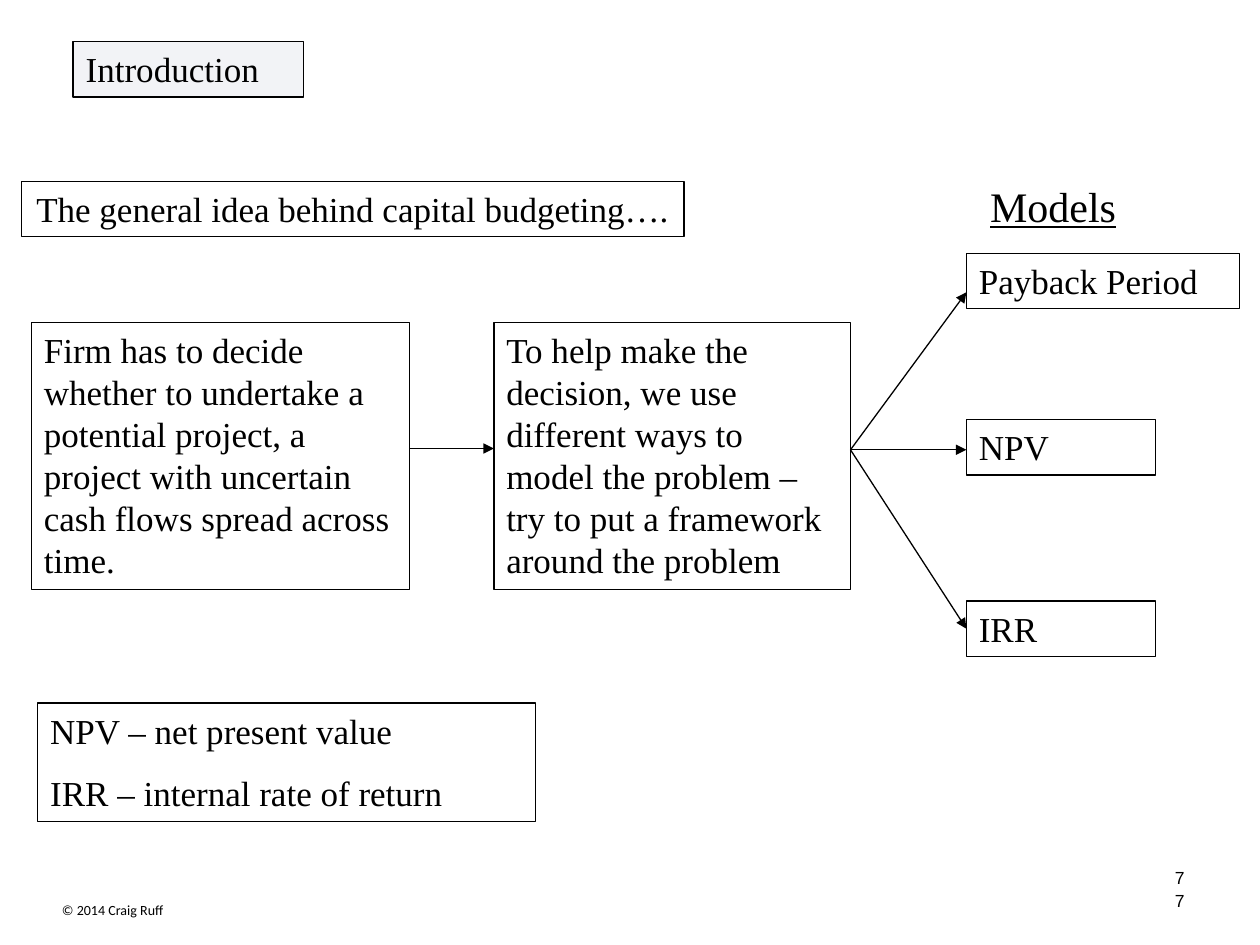
from lxml import etree
from pptx import Presentation
from pptx.dml.color import RGBColor
from pptx.enum.shapes import MSO_CONNECTOR, MSO_SHAPE
from pptx.enum.text import MSO_ANCHOR, MSO_AUTO_SIZE, PP_ALIGN
from pptx.oxml.ns import qn
from pptx.util import Inches, Pt

STRAIGHT = MSO_CONNECTOR.STRAIGHT
RECTANGLE = MSO_SHAPE.RECTANGLE
TOP, MIDDLE = MSO_ANCHOR.TOP, MSO_ANCHOR.MIDDLE
LEFT, CENTER, RIGHT = PP_ALIGN.LEFT, PP_ALIGN.CENTER, PP_ALIGN.RIGHT
NO_AUTOFIT = MSO_AUTO_SIZE.NONE

COLORS = {"ink": "000000", "title_fill": "002060"}
SERIF = "Times New Roman"
TITLE_ONLY = 5
LINE_WIDTH = 0.75
LABEL_HEIGHT = 0.44
IDEA_TOP, IDEA_HEIGHT = 2.56, 2.12
MODEL_LEFT = 7.67
FORK = (6.75, 3.57)
# name, box top, box width, height at which its arrow arrives
MODELS = [
    ("Payback Period", 2.01, 2.17, 2.32),
    ("NPV", 3.33, 1.5, 3.57),
    ("IRR", 4.77, 1.5, 4.99),
]


def color(name):
    return RGBColor.from_string(COLORS[name])


def write(shape, lines, size=20, font=SERIF, align=LEFT, anchor=TOP,
          wrap=True, underline=None):
    frame = shape.text_frame
    frame.text = "\n".join(lines)
    frame.auto_size = NO_AUTOFIT
    frame.word_wrap = wrap
    frame.vertical_anchor = anchor
    for index, para in enumerate(frame.paragraphs):
        para.alignment = align
        para.space_before = Pt(11.5 if index else 0)
        for span in para.runs:
            span.font.size = Pt(size)
            span.font.name = font
            span.font.underline = underline
            span.font.color.rgb = color("ink")


def outline(shape):
    shape.line.color.rgb = color("ink")
    shape.line.width = Pt(LINE_WIDTH)


def add_box(page, place, *lines, **style):
    box = page.shapes.add_shape(RECTANGLE, *map(Inches, place))
    box.shadow.inherit = False
    box.fill.background()
    outline(box)
    write(box, lines, **style)


def add_label(page, place, text, **style):
    write(page.shapes.add_textbox(*map(Inches, place)), [text], **style)


def add_arrow(page, start, end):
    arrow = page.shapes.add_connector(STRAIGHT, *map(Inches, start + end))
    outline(arrow)
    line = arrow.line._get_or_add_ln()
    etree.SubElement(line, qn("a:tailEnd"), type="triangle")
    etree.SubElement(arrow._element.spPr, qn("a:effectLst"))


def set_title(page, place, text):
    """Turn the title placeholder into an outlined box with a 5% tint."""
    title = page.shapes.title
    title.left, title.top, title.width, title.height = map(Inches, place)
    title.fill.solid()
    title.fill.fore_color.rgb = color("title_fill")
    tint = title._element.spPr.find(".//" + qn("a:srgbClr"))
    etree.SubElement(tint, qn("a:alpha"), val="5000")
    outline(title)
    write(title, [text])


def add_models(page):
    add_label(page, (7.76, 1.38, 1.75, 0.5), "Models", size=24, underline=True)
    for name, top, width, arrival in MODELS:
        add_arrow(page, FORK, (MODEL_LEFT, arrival))
        add_box(page, (MODEL_LEFT, top, width, LABEL_HEIGHT), name)


def add_footer(page):
    number = {"size": 10, "font": "Arial", "align": RIGHT}
    add_label(page, (7.42, 6.83, 2.08, 0.5), "7", **number)
    add_label(page, (7.17, 6.95, 2.33, 0.4), "7", anchor=MIDDLE, **number)
    add_label(page, (0.29, 7.11, 1.21, 0.24), "© 2014 Craig Ruff",
              size=8, font="Calibri", align=CENTER)


def main():
    deck = Presentation()
    deck.slide_width, deck.slide_height = Inches(10), Inches(7.5)
    page = deck.slides.add_slide(deck.slide_layouts[TITLE_ONLY])

    set_title(page, (0.58, 0.33, 1.83, LABEL_HEIGHT), "Introduction")
    add_box(page, (0.17, 1.44, 5.26, LABEL_HEIGHT),
            "The general idea behind capital budgeting….",
            align=CENTER, wrap=False)
    add_box(page, (0.25, IDEA_TOP, 3, IDEA_HEIGHT),
            "Firm has to decide whether to undertake a potential project, "
            "a project with uncertain cash flows spread across time.")
    add_box(page, (3.92, IDEA_TOP, 2.83, IDEA_HEIGHT),
            "To help make the decision, we use different ways to model the "
            "problem – try to put a framework around the problem")
    add_arrow(page, (3.25, 3.56), (3.92, 3.56))
    add_models(page)
    add_box(page, (0.3, 5.58, 3.95, 0.94),
            "NPV – net present value", "IRR – internal rate of return")
    add_footer(page)

    deck.save("out.pptx")


if __name__ == "__main__":
    main()
